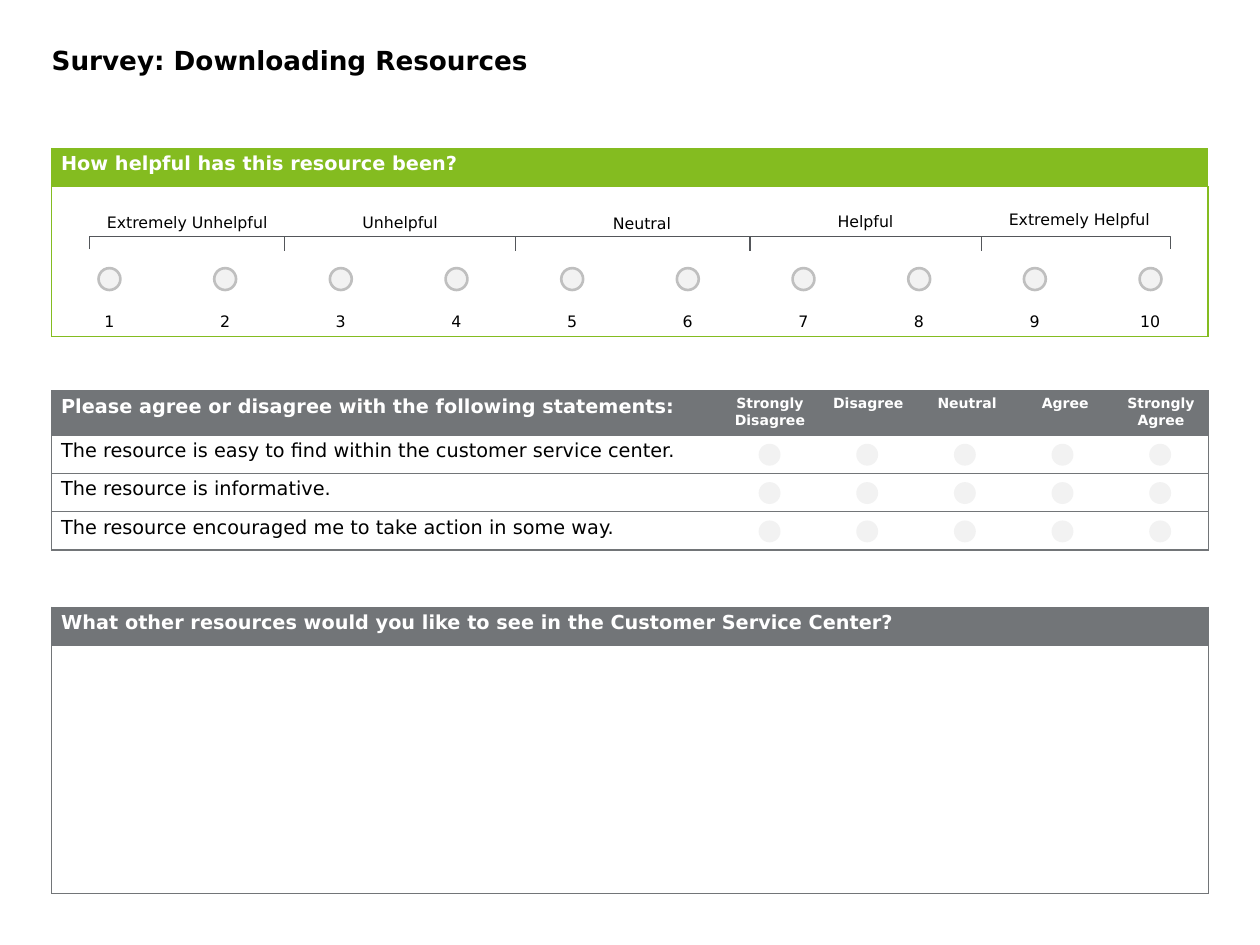
import pptx
import pptx.dml.color
import pptx.enum.shapes
import pptx.enum.text
import pptx.util
from lxml import etree

Pt = pptx.util.Pt
RGB = pptx.dml.color.RGBColor.from_string
SHAPE = pptx.enum.shapes.MSO_SHAPE
ALIGN = pptx.enum.text.PP_ALIGN
ANCHOR = pptx.enum.text.MSO_ANCHOR
A = "{http://schemas.openxmlformats.org/drawingml/2006/main}"
FONT = "DejaVu Sans"
COLORS = {
    "green": "84BC20", "gray": "727578", "scale": "53565A", "ring": "BFBFBF",
    "button": "F2F2F2", "white": "FFFFFF", "black": "000000",
}
LEFT, WIDTH = 29.5, 661
ROW = 21.9
BUTTON = 12.5

deck = pptx.Presentation()
deck.slide_width, deck.slide_height = Pt(720), Pt(540)
slide = deck.slides.add_slide(deck.slide_layouts[5])
shapes = slide.shapes


def add_panel(top, columns, rows, accent, texts):
    """Add a table with a filled header, ruled rows and no inner vertical lines."""
    frame = shapes.add_table(len(rows), len(columns), Pt(LEFT), Pt(top), Pt(WIDTH), Pt(sum(rows)))
    panel = frame.table
    panel.horz_banding = False
    for column, width in zip(panel.columns, columns):
        column.width = Pt(width)
    for r, height in enumerate(rows):
        panel.rows[r].height = Pt(height)
        for c in range(len(columns)):
            cell = panel.cell(r, c)
            margins = {"margin_left": 5.4, "margin_right": 5.4, "margin_top": 2.7, "margin_bottom": 2.7}
            for name, value in margins.items():
                setattr(cell, name, Pt(value))
            drawn = {"lnL": c == 0, "lnR": c == len(columns) - 1, "lnT": True, "lnB": True}
            for side, visible in drawn.items():
                border = etree.SubElement(cell._tc.get_or_add_tcPr(), A + side, w=str(Pt(0.75)))
                if visible:
                    fill = etree.SubElement(border, A + "solidFill")
                    etree.SubElement(fill, A + "srgbClr", val=COLORS[accent])
                else:
                    etree.SubElement(border, A + "noFill")
            if r == 0:
                cell.fill.solid()
                cell.fill.fore_color.rgb = RGB(COLORS[accent])
            else:
                cell.fill.background()
            paragraph = cell.text_frame.paragraphs[0]
            if (r, c) not in texts:
                etree.SubElement(paragraph._p, A + "endParaRPr", sz="900")
                continue
            content, size = texts[r, c]
            style_text(paragraph, content, size, "black" if r else "white", r == 0,
                       ALIGN.LEFT if size == 11 else ALIGN.CENTER)
            if size == 9:
                cell.vertical_anchor = ANCHOR.BOTTOM
    return panel


def style_text(paragraph, content, size, color, bold=False, align=ALIGN.CENTER):
    paragraph.alignment = align
    run = paragraph.add_run()
    run.text = content
    for name, value in {"name": FONT, "size": Pt(size), "bold": bold}.items():
        setattr(run.font, name, value)
    run.font.color.rgb = RGB(COLORS[color])


title = shapes.title
title_format = {"left": 29.5, "top": 25.2, "width": WIDTH, "height": 23}
for name, value in title_format.items():
    setattr(title, name, Pt(value))
title_frame = title.text_frame
frame_format = {"margin_left": 0, "margin_right": 0, "margin_top": 0, "margin_bottom": 0,
                "vertical_anchor": ANCHOR.TOP, "word_wrap": True}
for name, value in frame_format.items():
    setattr(title_frame, name, value)
style_text(title_frame.paragraphs[0], "Survey: Downloading Resources", 15, "black", True, ALIGN.LEFT)

# Agreement statements
statements = [
    "Please agree or disagree with the following statements:",
    "The resource is easy to find within the customer service center.",
    "The resource is informative.",
    "The resource encouraged me to take action in some way.",
]
answers = ["Strongly Disagree", "Disagree", "Neutral", "Agree", "Strongly Agree"]
agreement = {(r, 0): (statement, 11) for r, statement in enumerate(statements)}
agreement.update({(0, c): (answer, 8) for c, answer in enumerate(answers, 1)})
add_panel(223.4, [382.4, 56.2, 56.2, 56.8, 55.4, 54], [25.2] + [ROW] * 3, "gray", agreement)

# Open question
question = "What other resources would you like to see in the Customer Service Center?"
add_panel(347, [WIDTH], [ROW, 141.8], "gray", {(0, 0): (question, 11)})

# Helpfulness rating
ratings = {(1, c): (str(c + 1), 9) for c in range(10)}
ratings[0, 0] = ("How helpful has this resource been?", 11)
rating_panel = add_panel(84.8, [WIDTH / 10] * 10, [ROW, 85.6], "green", ratings)
rating_panel.cell(0, 0).merge(rating_panel.cell(0, 9))

# Answer buttons
buttons = [(433.5 + 55.8 * c, 253.6 + ROW * r, None) for r in range(3) for c in range(5)]
buttons += [(LEFT + WIDTH / 10 * (c + 0.5) - BUTTON / 2, 153.2, "ring") for c in range(10)]
for x, y, outline in buttons:
    button = shapes.add_shape(SHAPE.OVAL, Pt(x), Pt(y), Pt(BUTTON), Pt(BUTTON))
    button.shadow.inherit = False
    button.fill.solid()
    button.fill.fore_color.rgb = RGB(COLORS["button"])
    if outline:
        button.line.color.rgb = RGB(COLORS[outline])
        button.line.width = Pt(1.5)
    else:
        button.line.fill.background()

# Scale bracket, its dividers and its labels
bracket = shapes.add_shape(SHAPE.RIGHT_BRACKET, Pt(356.5), Pt(-170), Pt(7), Pt(617.6))
bracket.rotation = 270
bracket.adjustments[0] = 0
bracket.shadow.inherit = False
bracket.fill.background()
scale_lines = [bracket]
for x in [162.7, 294.4, 428.6, 560.7]:
    divider = shapes.add_connector(pptx.enum.shapes.MSO_CONNECTOR.STRAIGHT, Pt(x), Pt(135), Pt(x), Pt(143.3))
    etree.SubElement(divider._element.spPr, A + "effectLst")
    scale_lines.append(divider)
for scale_line in scale_lines:
    scale_line.line.color.rgb = RGB(COLORS["scale"])
    scale_line.line.width = Pt(0.75)

scale_labels = [
    ("Extremely Unhelpful", 51.1, 119.5, 111.6, 14.4),
    ("Unhelpful", 172.8, 119.5, 111.6, 14.4),
    ("Neutral", 311, 119.8, 111.6, 14.4),
    ("Helpful", 433.7, 119.8, 121.7, 12.2),
    ("Extremely Helpful", 560.9, 117.5, 111.6, 14.4),
]
for wording, *bounds in scale_labels:
    label = shapes.add_shape(SHAPE.RECTANGLE, *map(Pt, bounds))
    label.shadow.inherit = False
    label.fill.solid()
    label.fill.fore_color.rgb = RGB(COLORS["white"])
    label.line.fill.background()
    label_format = {"margin_left": 0, "margin_right": 0, "margin_top": Pt(7.2), "margin_bottom": Pt(7.2),
                    "vertical_anchor": ANCHOR.MIDDLE, "word_wrap": True}
    for name, value in label_format.items():
        setattr(label.text_frame, name, value)
    paragraph = label.text_frame.paragraphs[0]
    paragraph.line_spacing = 1.06
    style_text(paragraph, wording, 9, "black")

deck.save("out.pptx")
